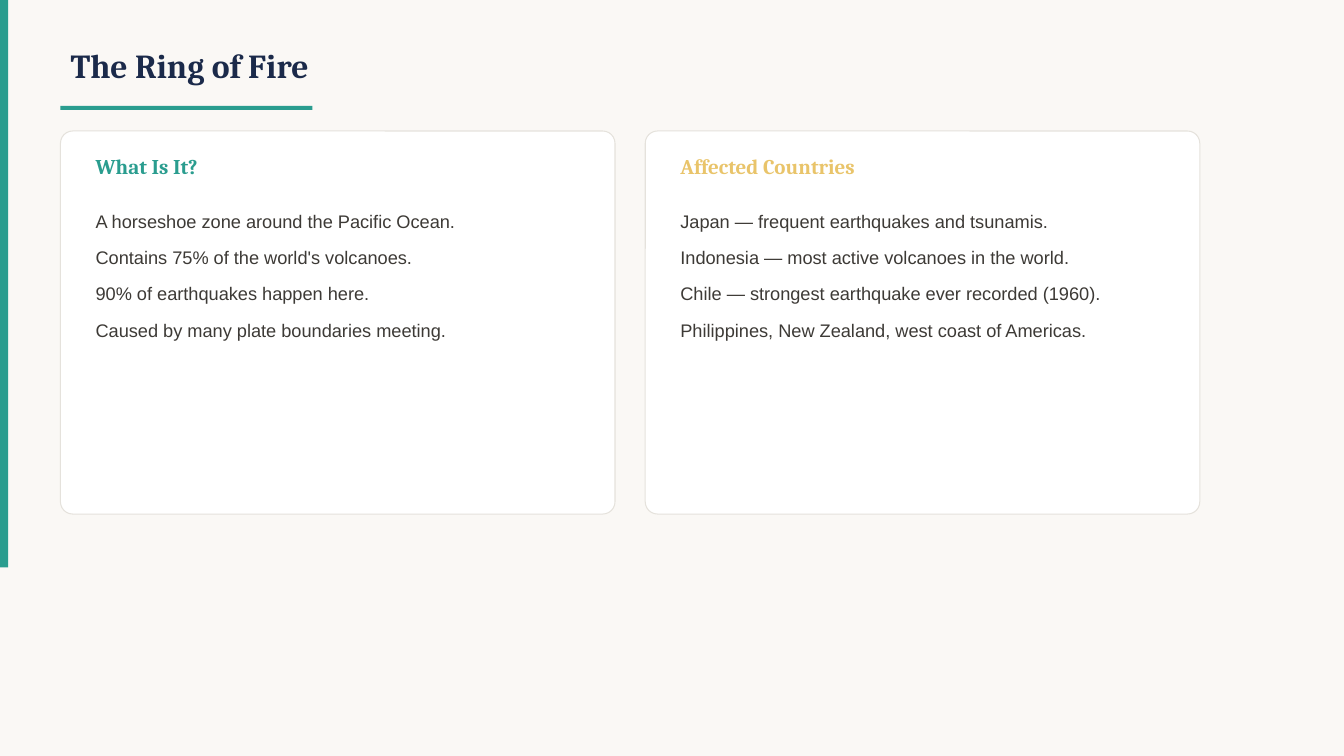
from dataclasses import dataclass

from pptx import Presentation
from pptx.dml.color import RGBColor
from pptx.enum.shapes import MSO_SHAPE as Shape
from pptx.enum.text import MSO_ANCHOR as Anchor, MSO_AUTO_SIZE as AutoSize, PP_ALIGN as Align
from pptx.shapes.autoshape import Shape as AutoShape
from pptx.slide import Slide
from pptx.text.text import TextFrame
from pptx.util import Emu, Pt

PX = 9144  # EMU per px, 100 px to the inch
COLORS = {
    "background": "FAF8F5",
    "teal": "2A9D8F",
    "gold": "E9C46A",
    "navy": "1B2A4A",
    "ink": "3D3A36",
    "card": "FFFFFF",
    "border": "E5E2DC",
}
HEAD_FONT, BODY_FONT = "Cambria", "Arial"

LEFT = 60
CARD_TOP, CARD_W, CARD_H, CARD_GAP = 130, 550, 380, 30
PAD, TEXT_W = 25, 500


@dataclass(frozen=True)
class Card:
    heading: str
    color: str
    lines: tuple[str, ...]


CARDS = (
    Card("What Is It?", "teal", (
        "A horseshoe zone around the Pacific Ocean.",
        "Contains 75% of the world's volcanoes.",
        "90% of earthquakes happen here.",
        "Caused by many plate boundaries meeting.",
    )),
    Card("Affected Countries", "gold", (
        "Japan — frequent earthquakes and tsunamis.",
        "Indonesia — most active volcanoes in the world.",
        "Chile — strongest earthquake ever recorded (1960).",
        "Philippines, New Zealand, west coast of Americas.",
    )),
)


def px(n: int) -> Emu:
    return Emu(n * PX)


def rgb(name: str) -> RGBColor:
    return RGBColor.from_string(COLORS[name])


def add_block(s: Slide, kind: Shape, x: int, y: int, w: int, h: int, fill: str) -> AutoShape:
    """Add a flat filled shape without an outline."""
    sp = s.shapes.add_shape(kind, px(x), px(y), px(w), px(h))
    sp.shadow.inherit = False
    sp.fill.solid()
    sp.fill.fore_color.rgb = rgb(fill)
    sp.line.fill.background()
    return sp


def set_text(tf: TextFrame, text: str, font: str, size: int, color: str,
             bold: bool = False, anchor: Anchor = Anchor.MIDDLE) -> None:
    """Fill a frame with left-aligned text in one style."""
    tf.text = text
    tf.word_wrap = True
    tf.auto_size = AutoSize.NONE
    tf.vertical_anchor = anchor
    for p in tf.paragraphs:
        p.alignment = Align.LEFT
        for r in p.runs:
            r.font.name, r.font.size, r.font.bold = font, Pt(size), bold
            r.font.color.rgb = rgb(color)


def add_title(s: Slide, text: str) -> None:
    sp = s.shapes.title
    sp.left, sp.top, sp.width, sp.height = px(LEFT), px(30), px(1000), px(70)
    set_text(sp.text_frame, text, HEAD_FONT, 24, "navy", bold=True)
    add_block(s, Shape.RECTANGLE, LEFT, 105, 250, 4, "teal")


def add_card(s: Slide, card: Card, x: int) -> None:
    sp = add_block(s, Shape.ROUNDED_RECTANGLE, x, CARD_TOP, CARD_W, CARD_H, "card")
    sp.adjustments[0] = 0.032
    sp.line.color.rgb = rgb("border")
    sp.line.width = Pt(0.75)

    heading = s.shapes.add_textbox(px(x + PAD), px(CARD_TOP + 15), px(TEXT_W), px(40))
    set_text(heading.text_frame, card.heading, HEAD_FONT, 15, card.color, bold=True)

    body = s.shapes.add_textbox(px(x + PAD), px(CARD_TOP + 65), px(TEXT_W), px(290))
    set_text(body.text_frame, "\n".join(card.lines), BODY_FONT, 13, "ink", anchor=Anchor.TOP)
    for p in body.text_frame.paragraphs:
        p.line_spacing = 1.4
        p.space_after = Pt(4)


def main() -> None:
    prs = Presentation()
    prs.slide_width, prs.slide_height = px(1333), px(750)
    s = prs.slides.add_slide(prs.slide_layouts.get_by_name("Title Only"))
    s.background.fill.solid()
    s.background.fill.fore_color.rgb = rgb("background")

    add_block(s, Shape.RECTANGLE, 0, 0, 8, 563, "teal")
    add_title(s, "The Ring of Fire")
    for i, card in enumerate(CARDS):
        add_card(s, card, LEFT + i * (CARD_W + CARD_GAP))
    prs.save("out.pptx")


if __name__ == "__main__":
    main()
